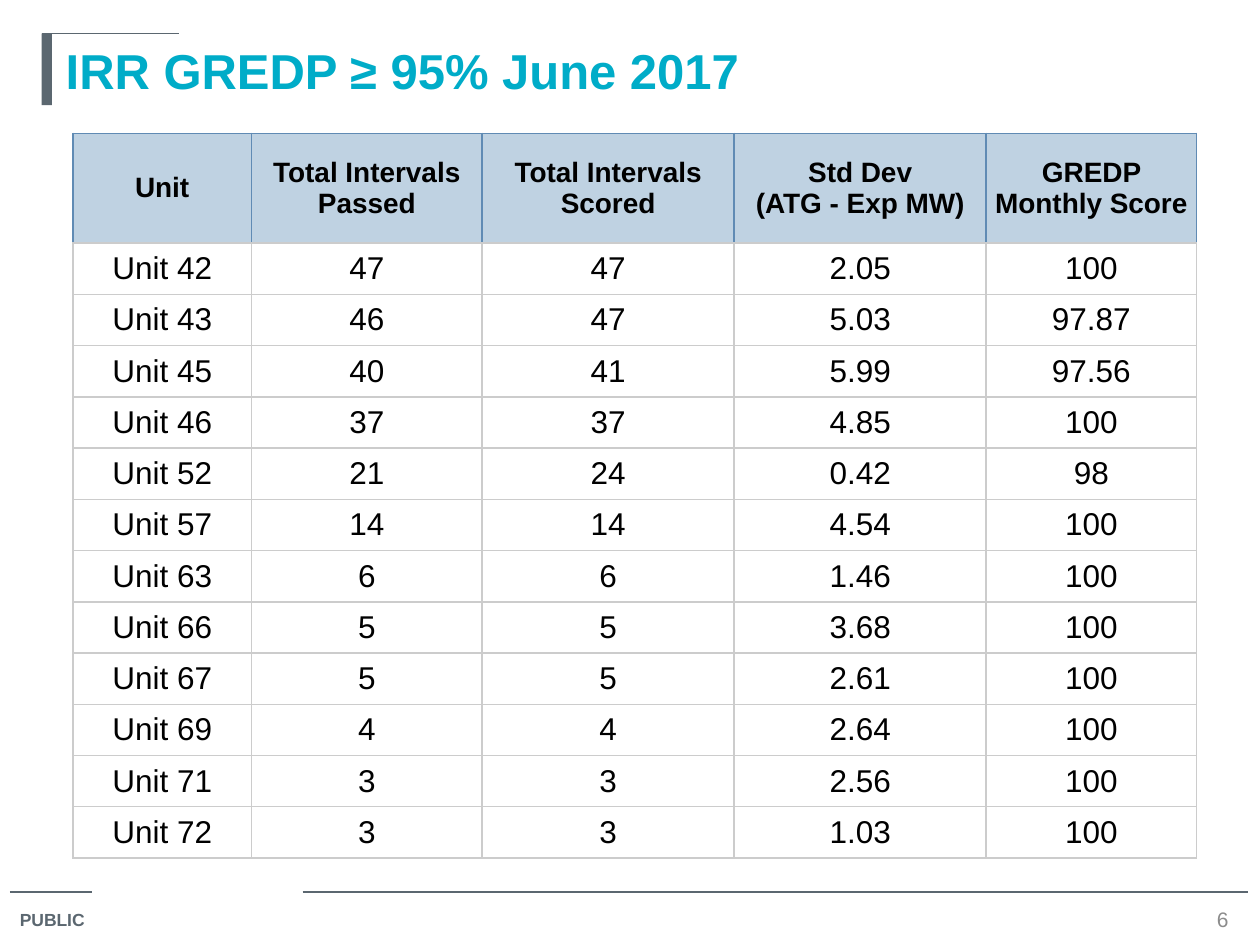
import pptx
import pptx.dml.color
import pptx.enum.shapes
import pptx.enum.text
import pptx.oxml
import pptx.oxml.ns
import pptx.util
from dataclasses import dataclass

Cm, Pt = pptx.util.Cm, pptx.util.Pt
ANCHOR, ALIGN = pptx.enum.text.MSO_ANCHOR, pptx.enum.text.PP_ALIGN

TITLE = "IRR GREDP ≥ 95% June 2017"
CLASSIFICATION = "PUBLIC"
PAGE_NUMBER = "6"
HEADINGS = [
    ["Unit"],
    ["Total Intervals Passed"],
    ["Total Intervals Scored"],
    ["Std Dev", "(ATG - Exp MW)"],
    ["GREDP Monthly Score"],
]
SCORES = [
    ("Unit 42", "47", "47", "2.05", "100"),
    ("Unit 43", "46", "47", "5.03", "97.87"),
    ("Unit 45", "40", "41", "5.99", "97.56"),
    ("Unit 46", "37", "37", "4.85", "100"),
    ("Unit 52", "21", "24", "0.42", "98"),
    ("Unit 57", "14", "14", "4.54", "100"),
    ("Unit 63", "6", "6", "1.46", "100"),
    ("Unit 66", "5", "5", "3.68", "100"),
    ("Unit 67", "5", "5", "2.61", "100"),
    ("Unit 69", "4", "4", "2.64", "100"),
    ("Unit 71", "3", "3", "2.56", "100"),
    ("Unit 72", "3", "3", "1.03", "100"),
]

# Positions and sizes in centimetres
COLUMN_WIDTHS = [3.6, 4.65, 5.08, 5.08, 4.24]
TABLE_LEFT, TABLE_TOP, TABLE_HEIGHT, HEADING_HEIGHT = 1.47, 2.69, 14.61, 2.21
RULES = [(0.2, 1.85, 17.98), (6.1, 25.15, 17.98), (0.84, 3.61, 0.68)]  # left, right, y


@dataclass(frozen=True)
class Theme:
    font: str = "Arial"
    title: str = "00ACC8"
    slate: str = "5B6770"
    page: str = "8C8C8C"
    ink: str = "000000"
    heading_fill: str = "BFD2E2"
    heading_border: str = "608BB4"
    grid: str = "CCCCCC"
    title_size: int = 28
    heading_size: int = 16
    score_size: int = 18
    page_size: int = 12
    label_size: int = 10
    rule_width: float = 0.75
    border_width: int = 1


THEME = Theme()


def rgb(color):
    return pptx.dml.color.RGBColor.from_string(color)


def write(frame, lines, size, color, bold=False, align=ALIGN.LEFT):
    for index, line in enumerate(lines):
        paragraph = frame.add_paragraph() if index else frame.paragraphs[0]
        paragraph.alignment = align
        run = paragraph.add_run()
        run.text = line
        run.font.name = THEME.font
        run.font.size = Pt(size)
        run.font.bold = bold
        run.font.color.rgb = rgb(color)


def set_borders(cell, sides, bottom):
    """Draw left, right and top borders in one colour and the bottom in another."""
    properties = cell._tc.get_or_add_tcPr()
    for tag, color in (("lnL", sides), ("lnR", sides), ("lnT", sides), ("lnB", bottom)):
        properties.append(pptx.oxml.parse_xml(
            f'<a:{tag} {pptx.oxml.ns.nsdecls("a")} w="{Pt(THEME.border_width)}">'
            f'<a:solidFill><a:srgbClr val="{color}"/></a:solidFill></a:{tag}>'))


def set_margins(box, margin):
    box.margin_left = box.margin_right = box.margin_top = box.margin_bottom = margin


def add_rule(slide, left, right, y):
    rule = slide.shapes.add_connector(
        pptx.enum.shapes.MSO_CONNECTOR.STRAIGHT, Cm(left), Cm(y), Cm(right), Cm(y))
    rule.line.color.rgb = rgb(THEME.slate)
    rule.line.width = Pt(THEME.rule_width)
    rule._element.spPr.append(
        pptx.oxml.parse_xml(f'<a:effectLst {pptx.oxml.ns.nsdecls("a")}/>'))


def add_title(slide):
    accent = slide.shapes.add_shape(
        pptx.enum.shapes.MSO_SHAPE.RECTANGLE, Cm(0.84), Cm(0.68), Cm(0.21), Cm(1.44))
    accent.shadow.inherit = False
    accent.fill.solid()
    accent.fill.fore_color.rgb = rgb(THEME.slate)
    accent.line.fill.background()

    title = slide.shapes.title
    title.left, title.top, title.width, title.height = Cm(1.07), Cm(0.68), Cm(23.5), Cm(1.98)
    frame = title.text_frame
    frame.vertical_anchor = ANCHOR.TOP
    frame.auto_size = pptx.enum.text.MSO_AUTO_SIZE.NONE
    write(frame, [TITLE], THEME.title_size, THEME.title, bold=True)


def add_scores(slide):
    table = slide.shapes.add_table(
        len(SCORES) + 1, len(HEADINGS), Cm(TABLE_LEFT), Cm(TABLE_TOP),
        Cm(sum(COLUMN_WIDTHS)), Cm(TABLE_HEIGHT)).table
    table.horz_banding = False
    for column, width in zip(table.columns, COLUMN_WIDTHS):
        column.width = Cm(width)
    score_height = (TABLE_HEIGHT - HEADING_HEIGHT) / len(SCORES)
    for index, row in enumerate(table.rows):
        row.height = Cm(score_height if index else HEADING_HEIGHT)

    content = [HEADINGS] + [[[value] for value in unit] for unit in SCORES]
    for row_index, row in enumerate(content):
        heading = row_index == 0
        for column_index, lines in enumerate(row):
            cell = table.cell(row_index, column_index)
            cell.vertical_anchor = ANCHOR.MIDDLE
            set_margins(cell, Cm(0.02 if heading else 0))
            set_borders(cell, THEME.heading_border if heading else THEME.grid, THEME.grid)
            if heading:
                cell.fill.solid()
                cell.fill.fore_color.rgb = rgb(THEME.heading_fill)
            else:
                cell.fill.background()
            write(cell.text_frame, lines,
                  THEME.heading_size if heading else THEME.score_size,
                  THEME.ink, bold=heading, align=ALIGN.CENTER)


def add_footer(slide):
    label = slide.shapes.add_textbox(Cm(0.15), Cm(18.21), Cm(1.96), Cm(0.68)).text_frame
    label.word_wrap = False
    write(label, [CLASSIFICATION], THEME.label_size, THEME.slate, bold=True)

    page = slide.shapes.add_textbox(Cm(24.33), Cm(18.24), Cm(0.64), Cm(0.58)).text_frame
    page.word_wrap = True
    page.vertical_anchor = ANCHOR.MIDDLE
    set_margins(page, 0)
    write(page, [PAGE_NUMBER], THEME.page_size, THEME.page, align=ALIGN.CENTER)


def main():
    presentation = pptx.Presentation()
    presentation.slide_width, presentation.slide_height = Cm(25.4), Cm(19.05)
    slide = presentation.slides.add_slide(presentation.slide_layouts.get_by_name("Title Only"))
    for left, right, y in RULES:
        add_rule(slide, left, right, y)
    add_title(slide)
    add_scores(slide)
    add_footer(slide)
    presentation.save("out.pptx")


if __name__ == "__main__":
    main()
